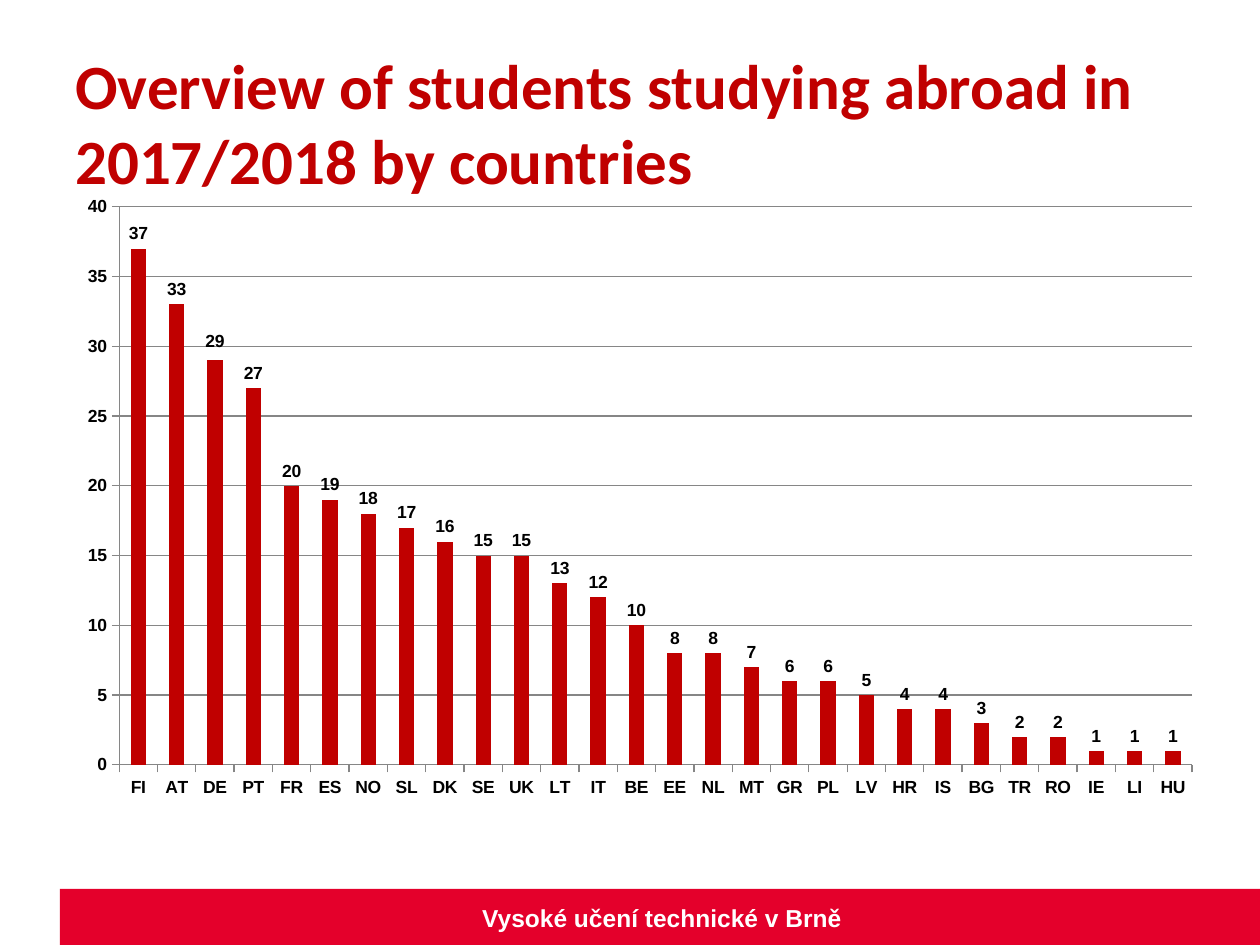
"""Build a slide with a column chart of students abroad by country."""
from lxml.etree import SubElement
from pptx import Presentation
from pptx.chart.data import CategoryChartData as Data
from pptx.dml.color import RGBColor as Rgb
from pptx.enum.chart import XL_CHART_TYPE as Kind, XL_LABEL_POSITION as Pos
from pptx.enum.chart import XL_TICK_MARK as Tick
from pptx.enum.shapes import MSO_SHAPE as Shape
from pptx.enum.text import MSO_ANCHOR as Anchor, PP_ALIGN as Align
from pptx.oxml import parse_xml
from pptx.oxml.ns import nsdecls, qn
from pptx.util import Pt

TITLE = "Overview of students studying abroad in 2017/2018 by countries"
FOOT = "Vysoké učení technické v Brně"
DATA = {
    "FI": 37, "AT": 33, "DE": 29, "PT": 27, "FR": 20, "ES": 19, "NO": 18,
    "SL": 17, "DK": 16, "SE": 15, "UK": 15, "LT": 13, "IT": 12, "BE": 10,
    "EE": 8, "NL": 8, "MT": 7, "GR": 6, "PL": 6, "LV": 5, "HR": 4,
    "IS": 4, "BG": 3, "TR": 2, "RO": 2, "IE": 1, "LI": 1, "HU": 1,
}
COLORS = {"band": "E4002B", "red": "C00000", "white": "FFFFFF",
          "black": "000000", "grid": "868686"}
CHART = (64, 185, 1150, 625)
PLOT = (119, 207, 1073, 558)
RAISED = ("DE", -0.007)
PX = 914400 // 126


def color(name):
    return Rgb.from_string(COLORS[name])


def place(box):
    return [n * PX for n in box]


def style(font, name, size, tint):
    font.name, font.size, font.bold = name, Pt(size), True
    font.color.rgb = color(tint)


def write(slide, box, text, look, align, anchor):
    frame = slide.shapes.add_textbox(*place(box)).text_frame
    frame.word_wrap = True
    frame.vertical_anchor = anchor
    para = frame.paragraphs[0]
    para.alignment = align
    run = para.add_run()
    run.text = text
    style(run.font, *look)


def layout(marks):
    node = parse_xml(f"<c:layout {nsdecls('c')}><c:manualLayout/></c:layout>")
    for tag, val in marks:
        SubElement(node[0], qn(f"c:{tag}")).set("val", str(val))
    return node


def fit(chart):
    area = chart._chartSpace.chart.plotArea
    for old in area.findall(qn("c:layout")):
        area.remove(old)
    left, top, wide, high = CHART
    x, y, w, h = PLOT
    area.insert(0, layout([
        ("layoutTarget", "inner"), ("xMode", "edge"), ("yMode", "edge"),
        ("x", round((x - left) / wide, 3)), ("y", round((y - top) / high, 3)),
        ("w", round(w / wide, 3)), ("h", round(h / high, 3))]))


def draw(slide):
    data = Data()
    data.categories = list(DATA)
    data.add_series("Series 1", list(DATA.values()))
    chart = slide.shapes.add_chart(
        Kind.COLUMN_CLUSTERED, *place(CHART), data).chart
    chart.has_legend = chart.has_title = False
    look = ("Arial", 10, "black")
    style(chart.font, *look)
    for axis in (chart.category_axis, chart.value_axis):
        axis.major_tick_mark, axis.minor_tick_mark = Tick.OUTSIDE, Tick.NONE
        axis.format.line.color.rgb = color("grid")
        style(axis.tick_labels.font, *look)
    axis = chart.value_axis
    axis.minimum_scale, axis.maximum_scale, axis.major_unit = 0, 40, 5
    axis.has_major_gridlines = True
    axis.major_gridlines.format.line.color.rgb = color("grid")
    plot = chart.plots[0]
    plot.gap_width, plot.vary_by_categories = 150, False
    bars = plot.series[0]
    bars.format.fill.solid()
    bars.format.fill.fore_color.rgb = color("red")
    bars.invert_if_negative = False
    labels = bars.data_labels
    labels.show_value, labels.position = True, Pos.OUTSIDE_END
    style(labels.font, *look)
    name, lift = RAISED
    label = bars.points[list(DATA).index(name)].data_label
    style(label.font, *look)
    label.position = Pos.OUTSIDE_END
    node = bars._element.find(".//" + qn("c:dLbl"))
    node.insert(1, layout([("x", 0), ("y", lift)]))
    fit(chart)


def main():
    deck = Presentation()
    deck.slide_width, deck.slide_height = 1260 * PX, 945 * PX
    slide = deck.slides.add_slide(deck.slide_layouts[6])
    band = slide.shapes.add_shape(Shape.RECTANGLE, *place((60, 889, 1200, 56)))
    band.shadow.inherit = False
    band.fill.solid()
    band.fill.fore_color.rgb = color("band")
    band.line.fill.background()
    write(slide, (64, 896, 1196, 43), FOOT, ("Arial", 14, "white"),
          Align.CENTER, Anchor.MIDDLE)
    write(slide, (63, 40, 1134, 117), TITLE, ("Calibri", 36, "red"),
          Align.LEFT, Anchor.TOP)
    draw(slide)
    deck.save("out.pptx")


if __name__ == "__main__":
    main()
